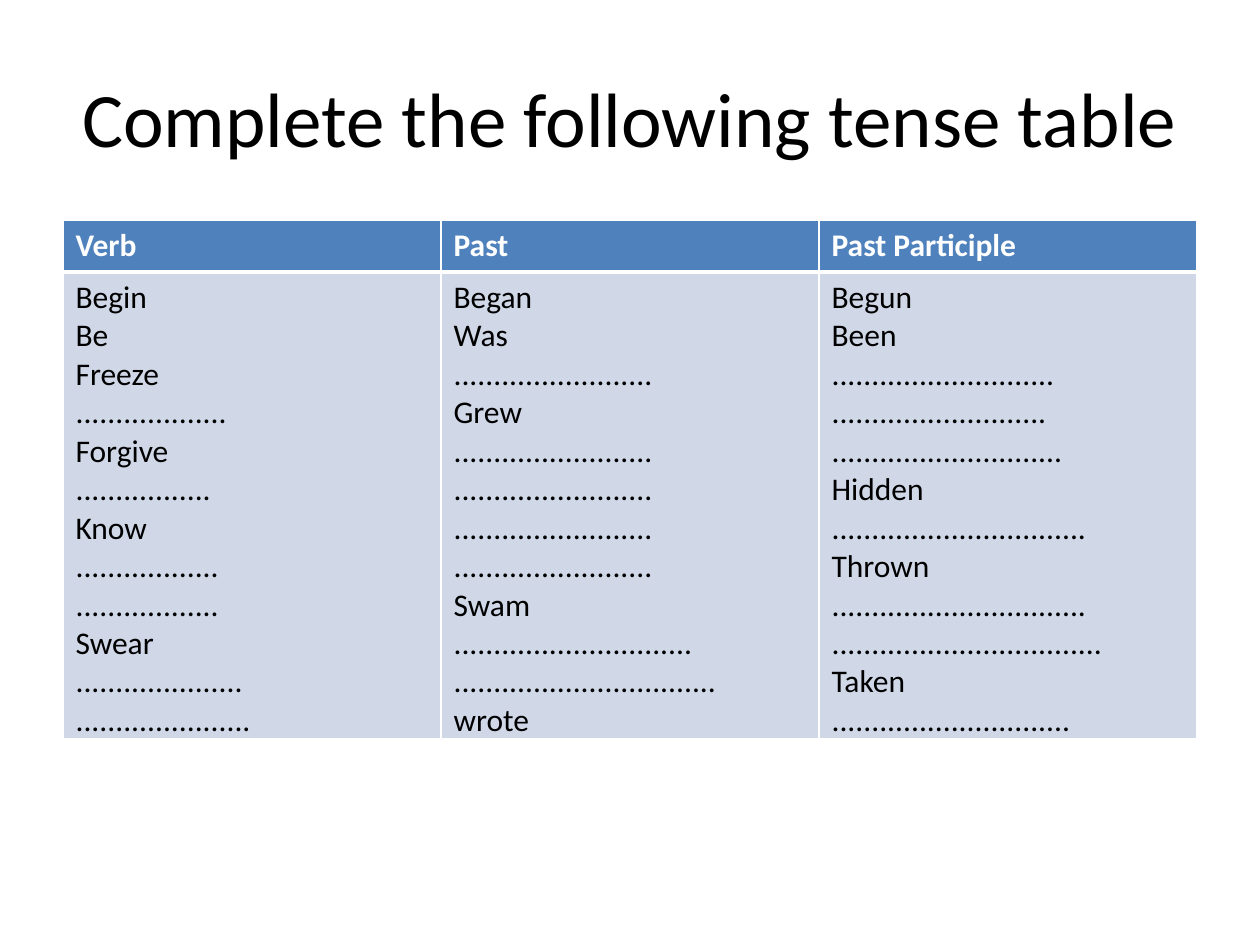
from lxml.etree import SubElement
from pptx import Presentation
from pptx.dml.color import RGBColor
from pptx.enum.text import MSO_ANCHOR, PP_ALIGN
from pptx.oxml.ns import qn
from pptx.util import Inches, Pt

COLORS = {"text": "000000", "white": "FFFFFF", "header": "4F81BD", "body": "D0D8E8"}

# Each column lists its words; a number stands for a gap of that many dots
COLUMNS = {
    "Verb": ["Begin", "Be", "Freeze", 19, "Forgive", 17, "Know", 18, 18,
             "Swear", 21, 22],
    "Past": ["Began", "Was", 25, "Grew", 25, 25, 25, 25, "Swam", 30, 33, "wrote"],
    "Past Participle": ["Begun", "Been", 28, 27, 29, "Hidden", 32, "Thrown", 32, 34,
                        "Taken", 30],
}


def write_text(frame, lines, size=18, color="text", bold=False, align=PP_ALIGN.LEFT):
    for index, line in enumerate(lines):
        para = frame.paragraphs[0] if index == 0 else frame.add_paragraph()
        para.alignment = align
        span = para.add_run()
        span.text = line
        span.font.name = "Calibri"
        span.font.size = Pt(size)
        span.font.bold = bold
        span.font.color.rgb = RGBColor.from_string(COLORS[color])


class SlideBuilder:
    def __init__(self, page):
        self.page = page

    def title(self, text, left, top, width, height):
        box = self.page.shapes.add_textbox(
            Inches(left), Inches(top), Inches(width), Inches(height))
        frame = box.text_frame
        frame.word_wrap = True
        frame.vertical_anchor = MSO_ANCHOR.MIDDLE
        write_text(frame, [text], size=44, align=PP_ALIGN.CENTER)

    def borders(self, cell, **widths):
        properties = cell._tc.get_or_add_tcPr()
        for side in "LRTB":
            line = SubElement(properties, qn(f"a:ln{side}"), w=str(Pt(widths.get(side, 1))))
            fill = SubElement(line, qn("a:solidFill"))
            SubElement(fill, qn("a:srgbClr"), val=COLORS["white"])

    def cell(self, cell, lines, fill, border_widths, **style):
        self.borders(cell, **border_widths)
        cell.fill.solid()
        cell.fill.fore_color.rgb = RGBColor.from_string(COLORS[fill])
        write_text(cell.text_frame, lines, **style)

    def table(self, columns, left, top, width, row_heights):
        table = self.page.shapes.add_table(
            len(row_heights), len(columns), Inches(left), Inches(top),
            Inches(width), Inches(sum(row_heights))).table
        for row, height in zip(table.rows, row_heights):
            row.height = Inches(height)
        for index, (heading, entries) in enumerate(columns.items()):
            lines = ["." * entry if isinstance(entry, int) else entry
                     for entry in entries]
            self.cell(table.cell(0, index), [heading], "header", {"B": 3},
                      color="white", bold=True)
            self.cell(table.cell(1, index), lines, "body", {"T": 3})


def main():
    deck = Presentation()
    deck.slide_width, deck.slide_height = Inches(10), Inches(7.5)
    builder = SlideBuilder(deck.slides.add_slide(deck.slide_layouts[6]))

    # Heading
    builder.title("Complete the following tense table", 0.5, 0.3, 9, 1.25)

    # Tense table
    builder.table(COLUMNS, 0.5, 1.75, 9, row_heights=[0.41, 3.7])

    deck.save("out.pptx")


if __name__ == "__main__":
    main()
